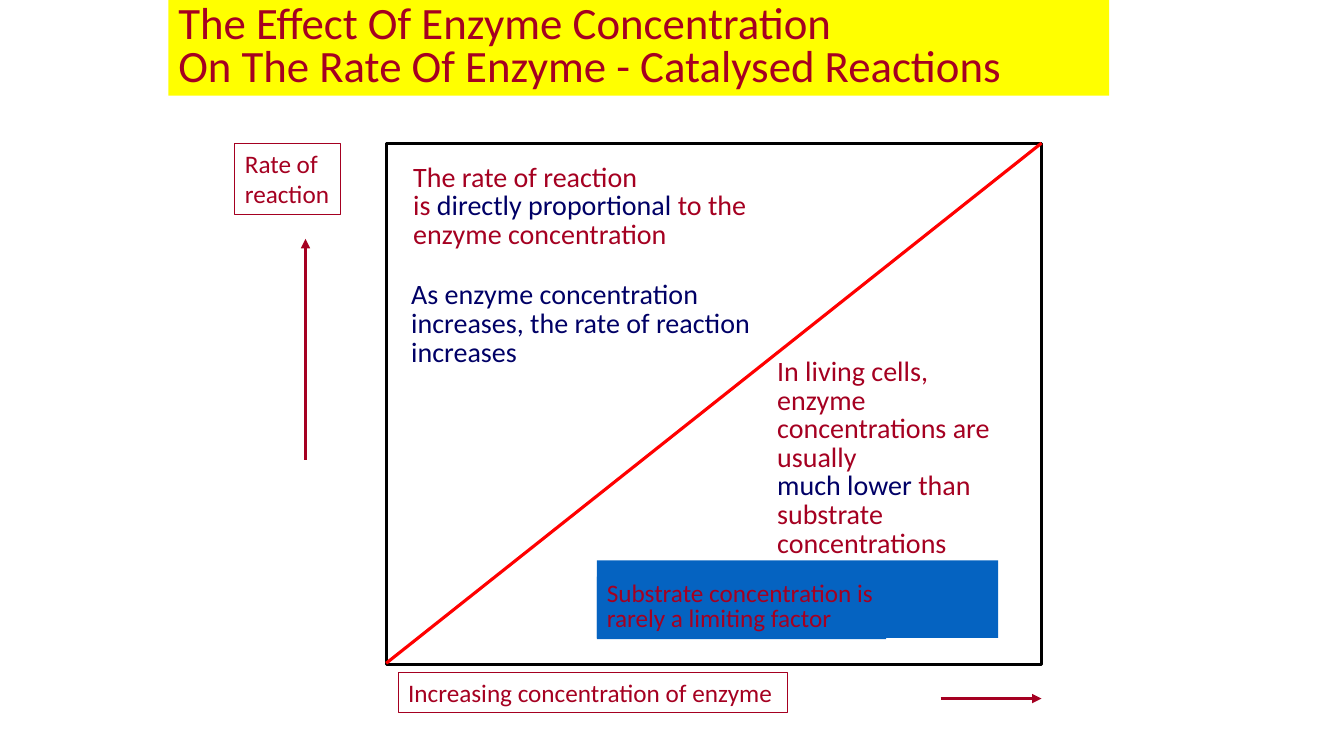
"""Build a slide on how enzyme concentration affects the rate of reaction."""
from dataclasses import dataclass

from lxml import etree
from pptx import Presentation
from pptx.dml.color import RGBColor
from pptx.enum import shapes, text
from pptx.oxml import ns
from pptx.util import Inches, Pt


@dataclass(frozen=True)
class Theme:
    font: str = "Calibri"
    crimson: str = "A50021"
    navy: str = "000066"
    yellow: str = "FFFF00"
    blue: str = "0563C1"
    red: str = "FF0000"
    black: str = "000000"
    title_size: int = 32
    body_size: int = 20
    label_size: int = 18
    thin: float = 0.75
    thick: float = 2.25


theme = Theme()
presentation = Presentation()
presentation.slide_width = Inches(13.33)
presentation.slide_height = Inches(7.5)
slide = presentation.slides.add_slide(presentation.slide_layouts[6])


def add_box(place, fill=None, line=None, weight=theme.thin):
    shape = slide.shapes.add_shape(shapes.MSO_SHAPE.RECTANGLE, *map(Inches, place))
    shape.shadow.inherit = False
    if fill:
        shape.fill.solid()
        shape.fill.fore_color.rgb = RGBColor.from_string(fill)
    else:
        shape.fill.background()
    if line:
        shape.line.color.rgb = RGBColor.from_string(line)
        shape.line.width = Pt(weight)
    else:
        shape.line.fill.background()
    return shape


def write(shape, lines, size, spacing=1.0, wrap=False, color=theme.crimson):
    frame = shape.text_frame
    frame.word_wrap = wrap
    frame.auto_size = text.MSO_AUTO_SIZE.SHAPE_TO_FIT_TEXT
    frame.vertical_anchor = text.MSO_ANCHOR.TOP
    for index, runs in enumerate(lines):
        paragraph = frame.add_paragraph() if index else frame.paragraphs[0]
        paragraph.alignment = text.PP_ALIGN.LEFT
        paragraph.line_spacing = spacing
        paragraph.font.name = theme.font
        paragraph.font.size = Pt(size)
        paragraph.font.color.rgb = RGBColor.from_string(color)
        for words, run_color in [(runs, color)] if isinstance(runs, str) else runs:
            run = paragraph.add_run()
            run.text = words
            if run_color != color:
                run.font.color.rgb = RGBColor.from_string(run_color)


title = add_box((1.67, 0, 9.33, 0.95), fill=theme.yellow)
write(title, ["The Effect Of Enzyme Concentration",
              "On The Rate Of Enzyme - Catalysed Reactions"],
      theme.title_size, 0.8, wrap=True)

add_box((3.83, 1.42, 6.5, 5.17), line=theme.black, weight=theme.thick)

axis_labels = [
    ((2.33, 1.42, 1.05, 0.71), ["Rate of", "reaction"]),
    ((3.95, 6.67, 3.86, 0.4), ["Increasing concentration of enzyme"]),
]
for place, lines in axis_labels:
    write(add_box(place, line=theme.crimson), lines, theme.label_size)

graph_lines = [
    ((3.03, 4.56, 3.03, 2.37), theme.crimson, True),
    ((9.33, 6.93, 10.33, 6.93), theme.crimson, True),
    ((3.83, 6.58, 10.33, 1.42), theme.red, False),
]
for ends, color, has_arrow in graph_lines:
    connector = slide.shapes.add_connector(
        shapes.MSO_CONNECTOR.STRAIGHT, *map(Inches, ends))
    connector.line.color.rgb = RGBColor.from_string(color)
    connector.line.width = Pt(theme.thick)
    if has_arrow:
        etree.SubElement(connector.line._get_or_add_ln(), ns.qn("a:tailEnd"),
                         type="triangle")
    etree.SubElement(connector._element.spPr, ns.qn("a:effectLst"))

notes = [
    ((4, 1.58, 3.6, 0.96), theme.crimson, False, [
        "The rate of reaction",
        [("is ", theme.crimson), ("directly proportional", theme.navy),
         (" to the", theme.crimson)],
        "enzyme concentration"]),
    ((3.98, 2.75, 3.66, 0.96), theme.navy, False, [
        "As enzyme concentration",
        "increases, the rate of reaction",
        "increases"]),
    ((7.61, 3.51, 2.6, 2.1), theme.crimson, True, [
        "In living cells, enzyme",
        "concentrations are usually",
        [("much lower ", theme.navy), ("than substrate", theme.crimson)],
        "concentrations"]),
]
for place, color, wrap, lines in notes:
    note = slide.shapes.add_textbox(*map(Inches, place))
    write(note, lines, theme.body_size, 0.85, wrap, color)

add_box((5.92, 5.56, 3.98, 0.77), fill=theme.blue)
conclusion = add_box((5.92, 5.72, 2.87, 0.62), fill=theme.blue)
write(conclusion, ["Substrate concentration is", "rarely a limiting factor"],
      theme.label_size, 0.85)

presentation.save("out.pptx")
